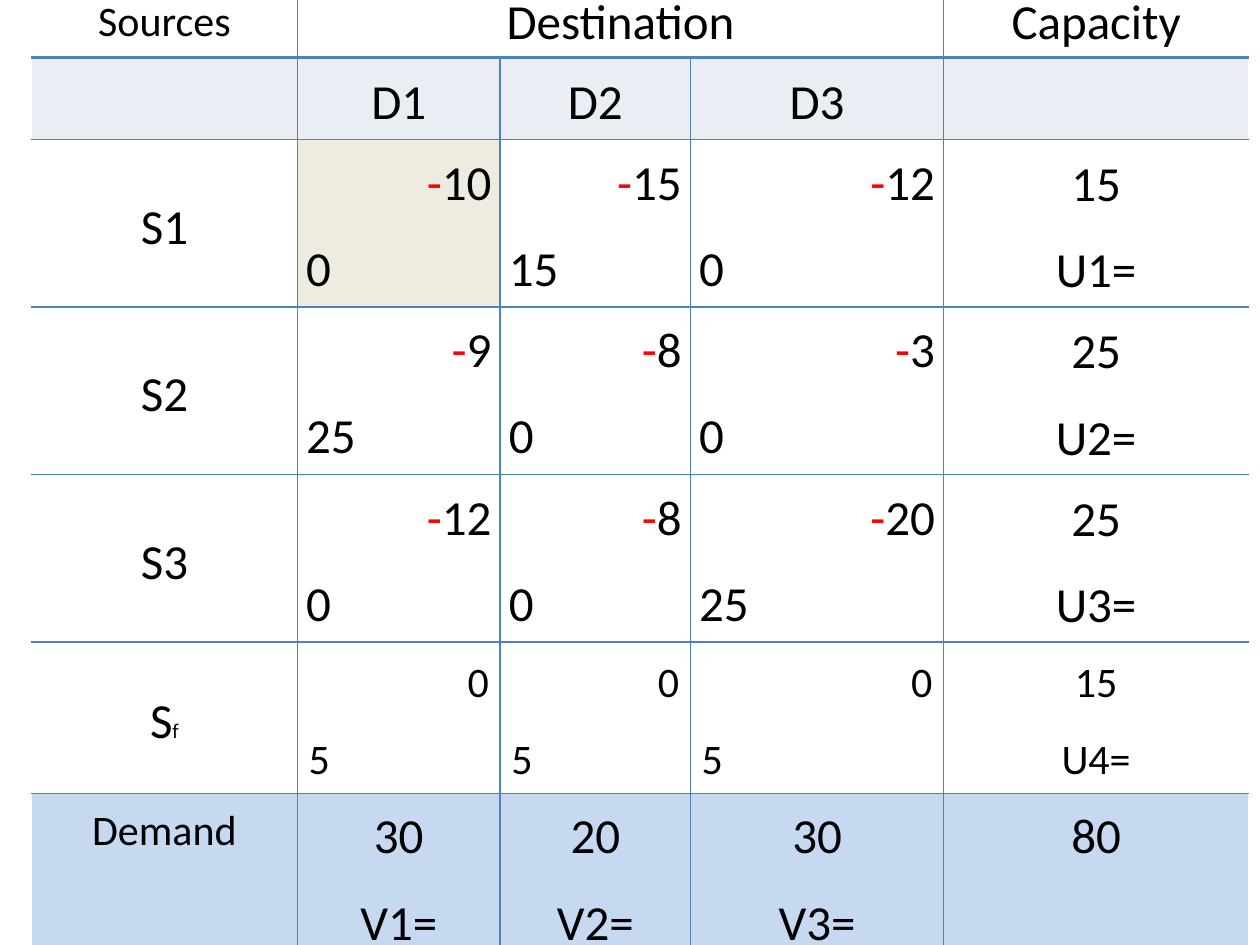
"""Build a transportation tableau slide with sources, destinations and capacities."""
from lxml import etree
from pptx import Presentation
from pptx.dml.color import RGBColor
from pptx.enum.text import MSO_ANCHOR, PP_ALIGN
from pptx.oxml.ns import qn
from pptx.util import Inches, Pt

LEFT, CENTER, RIGHT = PP_ALIGN.LEFT, PP_ALIGN.CENTER, PP_ALIGN.RIGHT
TOP, MIDDLE = MSO_ANCHOR.TOP, MSO_ANCHOR.MIDDLE
COLORS = {"text": "000000", "minus": "FF0000", "border": "4F81BD", "heading": "E9EDF4",
          "entering": "EEECE1", "white": "FFFFFF", "demand": "C6D9F1"}
COLUMN_WIDTHS = [2.11, 1.61, 1.51, 2.01, 2.42]
ROW_HEIGHTS = [0.61, 0.65, 1.33, 1.33, 1.33, 1.2, 0.76]
SOURCES = [
    ("S1", ["10", "15", "12"], ["0", "15", "0"], "15", None),
    ("S2", ["9", "8", "3"], ["25", "0", "0"], "25", None),
    ("S3", ["12", "8", "20"], ["0", "0", "25"], "25", "white"),
]
DEMANDS = ["30", "20", "30"]


def add_text(paragraph, text, size=28, color="text", align=CENTER):
    """Append a formatted run to a paragraph."""
    paragraph.alignment = align
    paragraph.line_spacing = 1.15
    paragraph.space_after = Pt(10)
    run = paragraph.add_run()
    run.text = text
    run.font.name = "Calibri"
    run.font.size = Pt(size)
    run.font.color.rgb = RGBColor.from_string(COLORS[color])


def add_border(cell, side, width):
    """Add one solid border to a cell."""
    properties = cell._tc.get_or_add_tcPr()
    line = etree.SubElement(properties, qn(f"a:{side}"), w=str(Pt(width)))
    fill = etree.SubElement(line, qn("a:solidFill"))
    etree.SubElement(fill, qn("a:srgbClr"), val=COLORS["border"])


def add_borders(table):
    """Rule the inner edges of the table, with a heavier line below the header."""
    last_row, last_column = len(ROW_HEIGHTS) - 1, len(COLUMN_WIDTHS) - 1
    for row in range(last_row + 1):
        for column in range(last_column + 1):
            cell = table.cell(row, column)
            if column > 0:
                add_border(cell, "lnL", 1)
            if column < last_column:
                add_border(cell, "lnR", 1)
            if row > 0:
                add_border(cell, "lnT", 2.25 if row == 1 else 1)
            if row < last_row:
                add_border(cell, "lnB", 2.25 if row == 0 else 1)


def format_cell(cell, fill=None, anchor=MIDDLE, margin=0.07):
    """Set the fill, anchor and margins of a cell."""
    if fill:
        cell.fill.solid()
        cell.fill.fore_color.rgb = RGBColor.from_string(COLORS[fill])
    else:
        cell.fill.background()
    cell.vertical_anchor = anchor
    cell.margin_left = cell.margin_right = Inches(margin)
    cell.margin_top = cell.margin_bottom = Inches(0.04)


def fill_centered(cell, lines, size=28, **cell_format):
    """Write centred lines in a cell."""
    format_cell(cell, **cell_format)
    for index, line in enumerate(lines):
        frame = cell.text_frame
        paragraph = frame.add_paragraph() if index else frame.paragraphs[0]
        add_text(paragraph, line, size=size)


def fill_route(cell, cost, amount, sign="-", size=28, **cell_format):
    """Write a cost at the right and the shipped amount at the left below it."""
    format_cell(cell, **cell_format)
    paragraph = cell.text_frame.paragraphs[0]
    if sign:
        add_text(paragraph, sign, size=size, color="minus", align=RIGHT)
    add_text(paragraph, cost, size=size, align=RIGHT)
    add_text(cell.text_frame.add_paragraph(), amount, size=size, align=LEFT)


def add_tableau(slide):
    """Add the empty, ruled table."""
    table = slide.shapes.add_table(
        len(ROW_HEIGHTS), len(COLUMN_WIDTHS), Inches(0.25), Inches(-0.17),
        Inches(sum(COLUMN_WIDTHS)), Inches(sum(ROW_HEIGHTS))).table
    table.first_row = table.horz_banding = False
    for column, width in zip(table.columns, COLUMN_WIDTHS):
        column.width = Inches(width)
    for row, height in zip(table.rows, ROW_HEIGHTS):
        row.height = Inches(height)
    table.cell(0, 1).merge(table.cell(0, 3))
    add_borders(table)
    return table


def fill_headings(table):
    """Write the two heading rows."""
    fill_centered(table.cell(0, 0), ["Sources"], size=24)
    fill_centered(table.cell(0, 1), ["Destination"])
    fill_centered(table.cell(0, 4), ["Capacity"])
    for column, name in enumerate(["", "D1", "D2", "D3", ""]):
        fill_centered(table.cell(1, column), [name] if name else [], fill="heading")


def fill_sources(table):
    """Write one row for each real source."""
    for number, (name, costs, amounts, capacity, fill) in enumerate(SOURCES, start=1):
        row = number + 1
        fill_centered(table.cell(row, 0), [name], fill=fill)
        for column, (cost, amount) in enumerate(zip(costs, amounts), start=1):
            route_fill = "entering" if (number, column) == (1, 1) else fill
            fill_route(table.cell(row, column), cost, amount, fill=route_fill, anchor=TOP)
        fill_centered(table.cell(row, 4), [capacity, f"U{number}="], fill=fill)


def fill_dummy_source(table):
    """Write the row of the fictitious source."""
    cell_format = {"fill": "white", "margin": 0.09}
    name_cell = table.cell(5, 0)
    fill_centered(name_cell, ["S"], **cell_format)
    add_text(name_cell.text_frame.paragraphs[0], "f", size=12)
    for column in range(1, 4):
        fill_route(table.cell(5, column), "0", "5", sign="", size=24, **cell_format)
    fill_centered(table.cell(5, 4), ["15", "U4="], size=24, **cell_format)


def fill_demand(table):
    """Write the demand row."""
    cell_format = {"fill": "demand", "anchor": TOP}
    fill_centered(table.cell(6, 0), ["Demand"], size=24, **cell_format)
    for column, demand in enumerate(DEMANDS, start=1):
        fill_centered(table.cell(6, column), [demand, f"V{column}="], **cell_format)
    fill_centered(table.cell(6, 4), ["80"], **cell_format)


def main():
    """Build and save the presentation."""
    presentation = Presentation()
    presentation.slide_width, presentation.slide_height = Inches(10), Inches(7.5)
    slide = presentation.slides.add_slide(presentation.slide_layouts[6])
    table = add_tableau(slide)
    fill_headings(table)
    fill_sources(table)
    fill_dummy_source(table)
    fill_demand(table)
    presentation.save("out.pptx")


if __name__ == "__main__":
    main()
